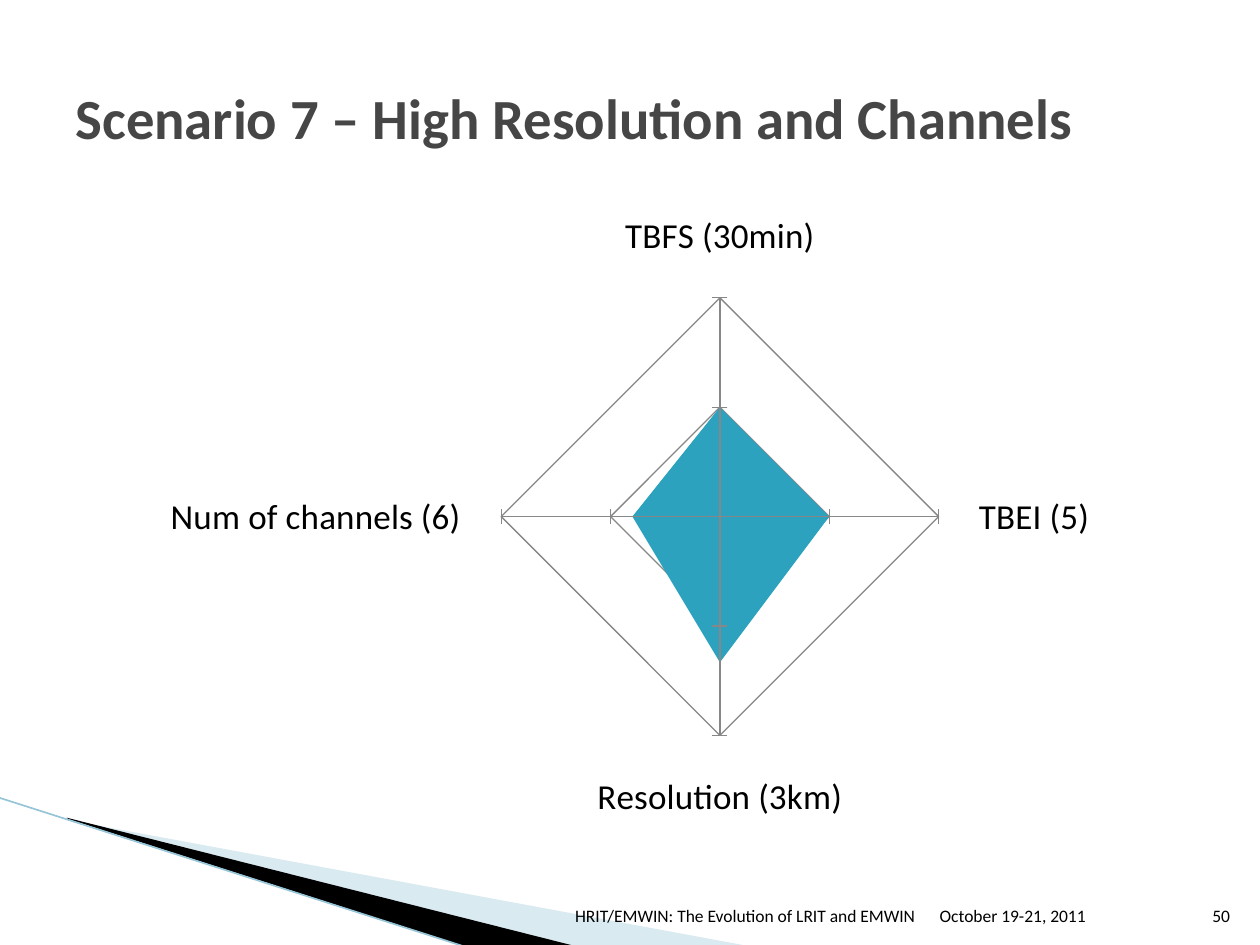
from dataclasses import dataclass

from lxml.etree import SubElement
from pptx import Presentation
from pptx.chart.data import CategoryChartData
from pptx.dml.color import RGBColor
from pptx.enum.chart import XL_CHART_TYPE, XL_TICK_LABEL_POSITION, XL_TICK_MARK
from pptx.enum.shapes import MSO_CONNECTOR
from pptx.enum.text import MSO_ANCHOR, MSO_AUTO_SIZE, PP_ALIGN
from pptx.oxml.ns import qn
from pptx.util import Inches, Pt

WIDTH, HEIGHT = 10, 7.5


@dataclass(frozen=True)
class Theme:
    font: str = "Calibri"
    title: str = "464646"
    text: str = "000000"
    accent: str = "2DA2BF"
    pale: str = "A0CBDC"
    edge: str = "97C5D8"
    grid: str = "878787"
    title_size: float = 32.4
    label_size: float = 20
    small_size: float = 10


def rgb(value):
    return RGBColor.from_string(value)


def apply(target, values):
    for name, value in values.items():
        setattr(target, name, value)


class SlideBuilder:
    """Holds the theme and current slide; lengths are shares of the slide."""

    def __init__(self, prs, theme):
        self.prs, self.theme = prs, theme
        self.s = prs.slides.add_slide(prs.slide_layouts[5])

    def x(self, share):
        return round(self.prs.slide_width * share)

    def y(self, share):
        return round(self.prs.slide_height * share)

    def box(self, left, top, width, height):
        return self.x(left), self.y(top), self.x(width), self.y(height)

    def style(self, font, size, color, bold=False):
        apply(font, {"name": self.theme.font, "size": Pt(size), "bold": bold})
        font.color.rgb = rgb(color)

    def title(self, text, box):
        sp = self.s.shapes.title
        apply(sp, dict(zip(("left", "top", "width", "height"), self.box(*box))))
        tf = sp.text_frame
        apply(tf, {"text": text, "word_wrap": True, "auto_size": MSO_AUTO_SIZE.NONE,
                   "vertical_anchor": MSO_ANCHOR.MIDDLE})
        p = tf.paragraphs[0]
        p.alignment = PP_ALIGN.LEFT
        self.style(p.runs[0].font, self.theme.title_size, self.theme.title, True)

    def text(self, text, box, align):
        tf = self.s.shapes.add_textbox(*self.box(*box)).text_frame
        apply(tf, {"text": text, "word_wrap": True,
                   "vertical_anchor": MSO_ANCHOR.BOTTOM})
        p = tf.paragraphs[0]
        p.alignment = align
        self.style(p.runs[0].font, self.theme.small_size, self.theme.text)

    def outline(self, points, color, opacity=100):
        start, *rest = [(self.x(x), self.y(y)) for x, y in points]
        builder = self.s.shapes.build_freeform(*start)
        builder.add_line_segments(rest, close=True)
        sp = builder.convert_to_shape()
        sp.shadow.inherit = False
        sp.fill.solid()
        sp.fill.fore_color.rgb = rgb(color)
        sp.line.fill.background()
        if opacity < 100:
            clr = sp.fill._xPr.find(".//" + qn("a:srgbClr"))
            SubElement(clr, qn("a:alpha"), val=str(opacity * 1000))

    def line(self, start, end, color, width):
        sp = self.s.shapes.add_connector(
            MSO_CONNECTOR.STRAIGHT, self.x(start[0]), self.y(start[1]),
            self.x(end[0]), self.y(end[1]))
        sp.line.color.rgb = rgb(color)
        sp.line.width = Pt(width)
        SubElement(sp._element.spPr, qn("a:effectLst"))

    def radar(self, values, box, maximum, step):
        data = CategoryChartData()
        data.categories = list(values)
        data.add_series("Series 1", list(values.values()))
        chart = self.s.shapes.add_chart(
            XL_CHART_TYPE.RADAR_FILLED, *self.box(*box), data).chart
        apply(chart, {"has_legend": False, "has_title": False})
        self.style(chart.font, self.theme.small_size, self.theme.text)
        plot = chart.plots[0]
        plot.vary_by_categories = False
        fill = plot.series[0].format.fill
        fill.solid()
        fill.fore_color.rgb = rgb(self.theme.accent)

        for axis in (chart.category_axis, chart.value_axis):
            apply(axis, {"has_major_gridlines": True,
                         "major_tick_mark": XL_TICK_MARK.CROSS,
                         "minor_tick_mark": XL_TICK_MARK.NONE})
            for part in (axis, axis.major_gridlines):
                part.format.line.color.rgb = rgb(self.theme.grid)
                part.format.line.width = Pt(0.75)
        self.style(chart.category_axis.tick_labels.font,
                   self.theme.label_size, self.theme.text)
        apply(chart.value_axis, {
            "minimum_scale": 0, "maximum_scale": maximum, "major_unit": step,
            "tick_label_position": XL_TICK_LABEL_POSITION.NONE})


def shares(*inches):
    """Turn alternating horizontal and vertical inches into slide shares."""
    return [n / (HEIGHT if i % 2 else WIDTH) for i, n in enumerate(inches)]


def main():
    prs = Presentation()
    prs.slide_width, prs.slide_height = Inches(WIDTH), Inches(HEIGHT)
    theme = Theme()
    slide = SlideBuilder(prs, theme)

    # Corner decoration
    slide.outline([shares(*pt) for pt in
                   ((0.55, 6.51), (5.95, 7.51), (4.56, 7.51), (0.55, 6.5))],
                  theme.pale, 40)
    slide.outline([shares(*pt) for pt in
                   ((0.53, 6.49), (4.57, 7.51), (3.72, 7.52), (0.54, 6.5))],
                  theme.text)
    slide.line(shares(-0.01, 6.33), shares(3.71, 7.52), theme.edge, 0.95)

    # Scenario chart
    slide.radar({"TBFS (30min)": 75, "TBEI (5)": 75, "Resolution (3km)": 100,
                 "Num of channels (6)": 60}, shares(0.5, 1.6, 9, 5), 150, 75)

    # Footer row: columns share one baseline and meet edge to edge
    left = 4
    for text, width, align in (
            ("HRIT/EMWIN: The Evolution of LRIT and EMWIN", 3.36, PP_ALIGN.RIGHT),
            ("October 19-21, 2011", 2.1, PP_ALIGN.LEFT),
            ("50", 0.4, PP_ALIGN.RIGHT)):
        slide.text(text, shares(left, 7, width, 0.4), align)
        left += width

    # Title
    slide.title("Scenario 7 – High Resolution and Channels",
                shares(0.5, 0.3, 8.25, 1.25))
    prs.save("out.pptx")


if __name__ == "__main__":
    main()
